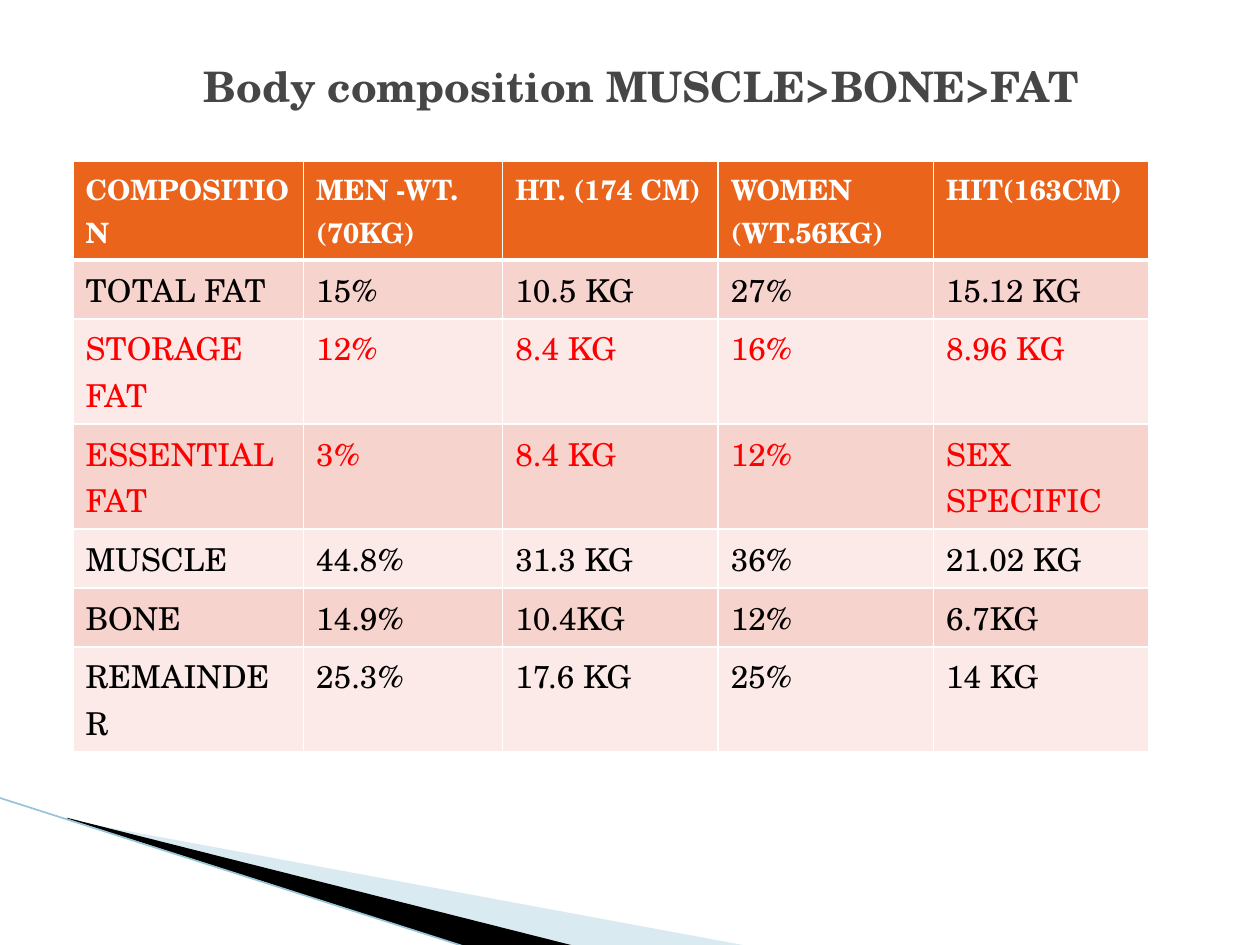
"""Build a slide with a table comparing body composition of men and women."""
import pptx
import pptx.dml.color
import pptx.enum.shapes
import pptx.enum.text
import pptx.oxml
import pptx.oxml.ns
import pptx.util
from lxml import etree

Inches = pptx.util.Inches
Pt = pptx.util.Pt
RGBColor = pptx.dml.color.RGBColor
qn = pptx.oxml.ns.qn

FONT = "TeX Gyre Schola"
WHITE = RGBColor(0xFF, 0xFF, 0xFF)
BLACK = RGBColor(0x00, 0x00, 0x00)
RED = RGBColor(0xFF, 0x00, 0x00)
GRAY = RGBColor(0x46, 0x46, 0x46)
ORANGE = RGBColor(0xEB, 0x64, 0x1B)
PINK = RGBColor(0xF7, 0xD3, 0xCD)
PALE_PINK = RGBColor(0xFB, 0xEA, 0xE8)
PALE_BLUE = RGBColor(0xA0, 0xCB, 0xDC)
LINE_BLUE = RGBColor(0x97, 0xC5, 0xD8)

TITLE = "Body composition MUSCLE>BONE>FAT"
ROWS = [
    ("COMPOSITION", "MEN -WT.(70KG)", "HT. (174 CM)", "WOMEN (WT.56KG)", "HIT(163CM)"),
    ("TOTAL FAT", "15%", "10.5 KG", "27%", "15.12 KG"),
    ("STORAGE FAT", "12%", "8.4 KG", "16%", "8.96 KG"),
    ("ESSENTIAL FAT", "3%", "8.4 KG", "12%", "SEX SPECIFIC"),
    ("MUSCLE", "44.8%", "31.3 KG", "36%", "21.02 KG"),
    ("BONE", "14.9%", "10.4KG", "12%", "6.7KG"),
    ("REMAINDER", "25.3%", "17.6 KG", "25%", "14 KG"),
]
RED_ROWS = (2, 3)
COLUMN_WIDTHS = (1.83, 1.58, 1.71, 1.71, 1.71)
ROW_HEIGHT = 0.41
WEDGES = [
    ([(0.55, 6.51), (5.95, 7.51), (4.56, 7.51), (0.55, 6.5)], PALE_BLUE, 40),
    ([(0.53, 6.49), (4.57, 7.51), (3.72, 7.52), (0.54, 6.5)], BLACK, 100),
]


def add_run(paragraph, text, size, color, bold):
    run = paragraph.add_run()
    run.text = text
    run.font.name = FONT
    run.font.size = Pt(size)
    run.font.color.rgb = color
    run.font.bold = bold


def add_wedge(slide, points, color, opacity):
    corners = [(Inches(x), Inches(y)) for x, y in points]
    builder = slide.shapes.build_freeform(*corners[0])
    builder.add_line_segments(corners[1:], close=True)
    shape = builder.convert_to_shape()
    shape.shadow.inherit = False
    shape.line.fill.background()
    shape.fill.solid()
    shape.fill.fore_color.rgb = color
    if opacity < 100:
        color_element = shape.fill._xPr.find(qn("a:solidFill"))[0]
        etree.SubElement(color_element, qn("a:alpha"), val=str(opacity * 1000))


def add_edge_line(slide):
    line = slide.shapes.add_connector(
        pptx.enum.shapes.MSO_CONNECTOR.STRAIGHT,
        Inches(-0.01), Inches(6.33), Inches(3.71), Inches(7.52))
    line.line.color.rgb = LINE_BLUE
    line.line.width = Pt(0.95)
    etree.SubElement(line._element.spPr, qn("a:effectLst"))


def set_borders(cell, top, bottom):
    properties = cell._tc.get_or_add_tcPr()
    widths = (("lnL", 1), ("lnR", 1), ("lnT", top), ("lnB", bottom))
    for position, (side, width) in enumerate(widths):
        border = etree.Element(qn(f"a:{side}"), w=str(Pt(width)))
        fill = etree.SubElement(border, qn("a:solidFill"))
        etree.SubElement(fill, qn("a:srgbClr"), val=str(WHITE))
        properties.insert(position, border)


def add_composition_table(slide):
    frame = slide.shapes.add_table(
        len(ROWS), len(COLUMN_WIDTHS), Inches(0.58), Inches(1.28),
        Inches(sum(COLUMN_WIDTHS)), Inches(ROW_HEIGHT * len(ROWS)))
    table = frame.table
    for column, width in zip(table.columns, COLUMN_WIDTHS):
        column.width = Inches(width)
    for row_index, texts in enumerate(ROWS):
        table.rows[row_index].height = Inches(ROW_HEIGHT)
        header = row_index == 0
        if header:
            fill, color, size = ORANGE, WHITE, 16
        else:
            fill = PINK if row_index % 2 else PALE_PINK
            color = RED if row_index in RED_ROWS else BLACK
            size = 18
        for column_index, text in enumerate(texts):
            cell = table.cell(row_index, column_index)
            cell.fill.solid()
            cell.fill.fore_color.rgb = fill
            set_borders(cell, 3 if row_index == 1 else 1, 3 if header else 1)
            add_run(cell.text_frame.paragraphs[0], text, size, color, header)


def add_title(slide):
    box = slide.shapes.add_textbox(Inches(0.59), Inches(0.33), Inches(9), Inches(0.7))
    text_frame = box.text_frame
    text_frame.word_wrap = True
    text_frame.vertical_anchor = pptx.enum.text.MSO_ANCHOR.MIDDLE
    paragraph = text_frame.paragraphs[0]
    paragraph.alignment = pptx.enum.text.PP_ALIGN.CENTER
    add_run(paragraph, TITLE, 24, GRAY, True)


def main():
    presentation = pptx.Presentation()
    presentation.slide_width = Inches(10)
    presentation.slide_height = Inches(7.5)
    slide = presentation.slides.add_slide(presentation.slide_layouts[6])
    for points, color, opacity in WEDGES:
        add_wedge(slide, points, color, opacity)
    add_edge_line(slide)
    add_composition_table(slide)
    add_title(slide)
    presentation.save("out.pptx")


if __name__ == "__main__":
    main()
